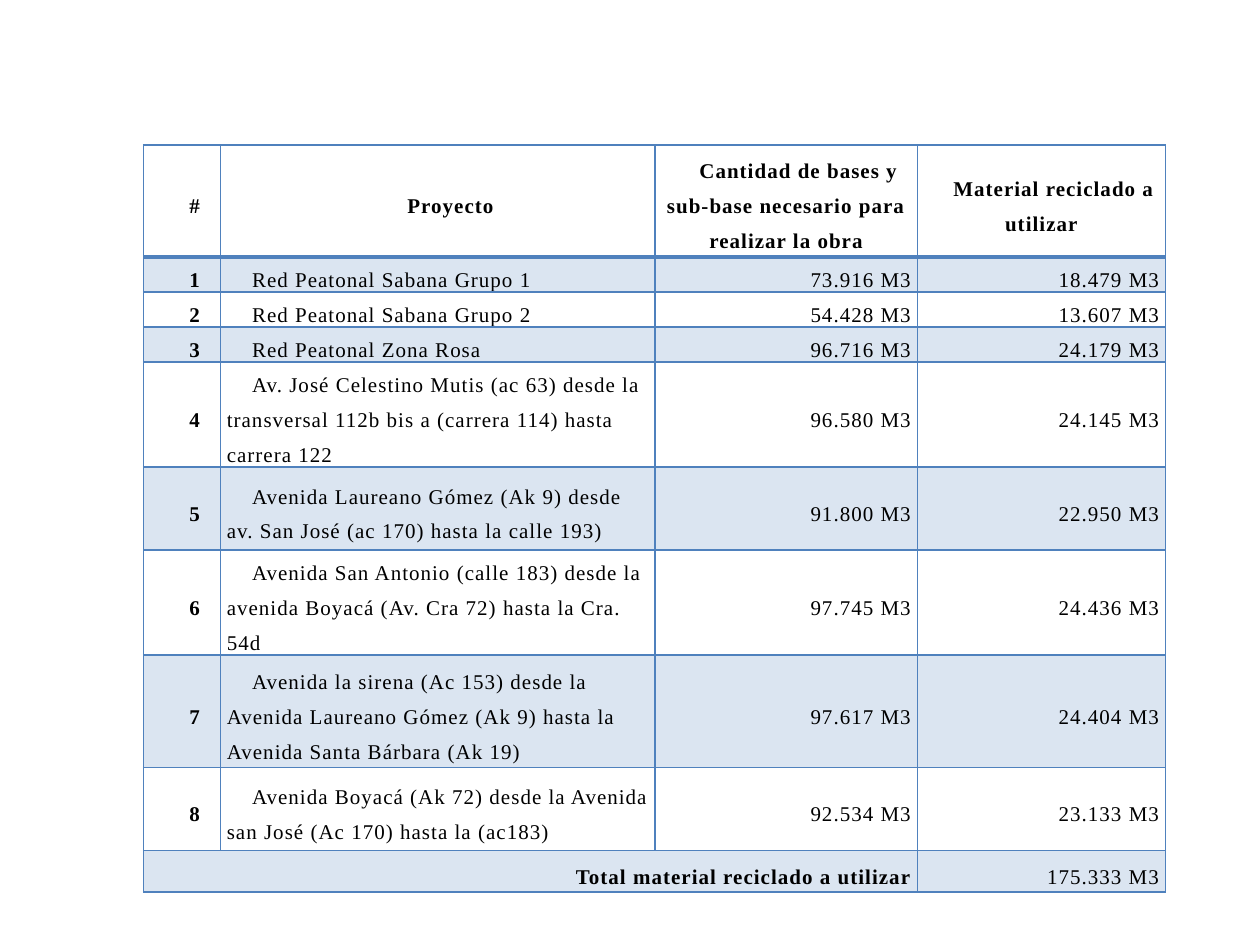
import pptx
import pptx.dml.color
import pptx.enum.text
import pptx.oxml
import pptx.oxml.ns
import pptx.util

Inches = pptx.util.Inches
Pt = pptx.util.Pt
Align = pptx.enum.text.PP_ALIGN

BLACK = pptx.dml.color.RGBColor(0x00, 0x00, 0x00)
BLUE = pptx.dml.color.RGBColor(0x4F, 0x81, 0xBD)

COLUMN_WIDTHS = [0.61, 3.45, 2.08, 1.97]
ROW_HEIGHTS = [0.89, 0.21, 0.21, 0.22, 0.66, 0.66, 0.66, 0.89, 0.66, 0.33]
HEADINGS = [
    "#",
    "Proyecto",
    "Cantidad de bases y sub-base necesario para realizar la obra",
    "Material reciclado a utilizar",
]
SHORT_PROJECTS = [
    ("Red Peatonal Sabana Grupo 1", "73.916", "18.479"),
    ("Red Peatonal Sabana Grupo 2", "54.428", "13.607"),
    ("Red Peatonal Zona Rosa", "96.716", "24.179"),
]
LONG_PROJECTS = [
    ("Av. José Celestino Mutis (ac 63) desde la transversal 112b bis a "
     "(carrera 114) hasta carrera 122", "96.580", "24.145"),
    ("Avenida Laureano Gómez (Ak 9) desde av. San José (ac 170) "
     "hasta la calle 193)", "91.800", "22.950"),
    ("Avenida San Antonio (calle 183) desde la avenida Boyacá "
     "(Av. Cra 72) hasta la Cra. 54d", "97.745", "24.436"),
    ("Avenida la sirena (Ac 153) desde la Avenida Laureano Gómez (Ak 9) "
     "hasta la Avenida Santa Bárbara (Ak 19)", "97.617", "24.404"),
    ("Avenida Boyacá (Ak 72) desde la Avenida san José (Ac 170) "
     "hasta la (ac183)", "92.534", "23.133"),
]


def write_text(paragraph, text, *, font, size, color, align, bold=False,
               indent=0.2, line_spacing=1.5, tracking=0.6):
    paragraph.alignment = align
    paragraph.line_spacing = line_spacing
    properties = paragraph._p.get_or_add_pPr()
    properties.set("marL", "0")
    properties.set("indent", str(Inches(indent)))
    span = paragraph.add_run()
    span.text = text
    span.font.name = font
    span.font.size = Pt(size)
    span.font.bold = bold
    span.font.color.rgb = color
    span.font._element.set("spc", str(round(tracking * 100)))


class TablePage:
    """Holds the style and the current slide, and draws table parts on it."""

    def __init__(self, deck):
        self.font = "Times New Roman"
        self.size = 12
        self.page = deck.slides.add_slide(deck.slide_layouts[6])

    def table(self, left, top, widths, heights):
        frame = self.page.shapes.add_table(
            len(heights), len(widths), Inches(left), Inches(top),
            Inches(sum(widths)), Inches(sum(heights)))
        table = frame.table
        table.horz_banding = False
        table.first_row = False
        for column, width in zip(table.columns, widths):
            column.width = Inches(width)
        for row, height in zip(table.rows, heights):
            row.height = Inches(height)
        for index, row in enumerate(table.rows):
            for cell in row.cells:
                self.frame_cell(cell, shaded=index % 2 == 1,
                                top=2 if index == 1 else 1,
                                bottom=2 if index == 0 else 1)
        return table

    def frame_cell(self, cell, shaded, top, bottom):
        cell.margin_left = cell.margin_right = Inches(0.05)
        cell.margin_top = cell.margin_bottom = 0
        cell.vertical_anchor = pptx.enum.text.MSO_ANCHOR.MIDDLE
        properties = cell._tc.get_or_add_tcPr()
        for side, width in (("L", 1), ("R", 1), ("T", top), ("B", bottom)):
            properties.append(pptx.oxml.parse_xml(
                f'<a:ln{side} {pptx.oxml.ns.nsdecls("a")} w="{int(Pt(width))}">'
                f'<a:solidFill><a:srgbClr val="{BLUE}"/></a:solidFill>'
                f'</a:ln{side}>'))
        if shaded:
            cell.fill.solid()
            cell.fill.fore_color.rgb = BLUE
            color = properties.xpath("a:solidFill/a:srgbClr")[0]
            color.append(pptx.oxml.parse_xml(
                f'<a:alpha {pptx.oxml.ns.nsdecls("a")} val="20000"/>'))
        else:
            cell.fill.background()

    def cell_text(self, cell, text, align, bold=False):
        write_text(cell.text_frame.paragraphs[0], text, font=self.font,
                   size=self.size, color=BLACK, align=align, bold=bold)

    def project_row(self, table, number, project, name_align):
        name, needed, recycled = project
        self.cell_text(table.cell(number, 0), str(number), Align.CENTER, bold=True)
        self.cell_text(table.cell(number, 1), name, name_align)
        self.cell_text(table.cell(number, 2), f"{needed} M3", Align.RIGHT)
        self.cell_text(table.cell(number, 3), f"{recycled} M3", Align.RIGHT)

    def total_row(self, table, label, total):
        last = len(table.rows) - 1
        table.cell(last, 0).merge(table.cell(last, 2))
        self.cell_text(table.cell(last, 0), label, Align.RIGHT, bold=True)
        self.cell_text(table.cell(last, 3), total, Align.RIGHT)


def main():
    deck = pptx.Presentation()
    deck.slide_width = Inches(10)
    deck.slide_height = Inches(7.5)
    page = TablePage(deck)
    table = page.table(1.14, 1.15, COLUMN_WIDTHS, ROW_HEIGHTS)
    for column, heading in enumerate(HEADINGS):
        page.cell_text(table.cell(0, column), heading, Align.CENTER, bold=True)
    for number, project in enumerate(SHORT_PROJECTS + LONG_PROJECTS, start=1):
        short = number <= len(SHORT_PROJECTS)
        page.project_row(table, number, project,
                         Align.JUSTIFY if short else Align.LEFT)
    page.total_row(table, "Total material reciclado a utilizar", "175.333 M3")
    deck.save("out.pptx")


if __name__ == "__main__":
    main()
